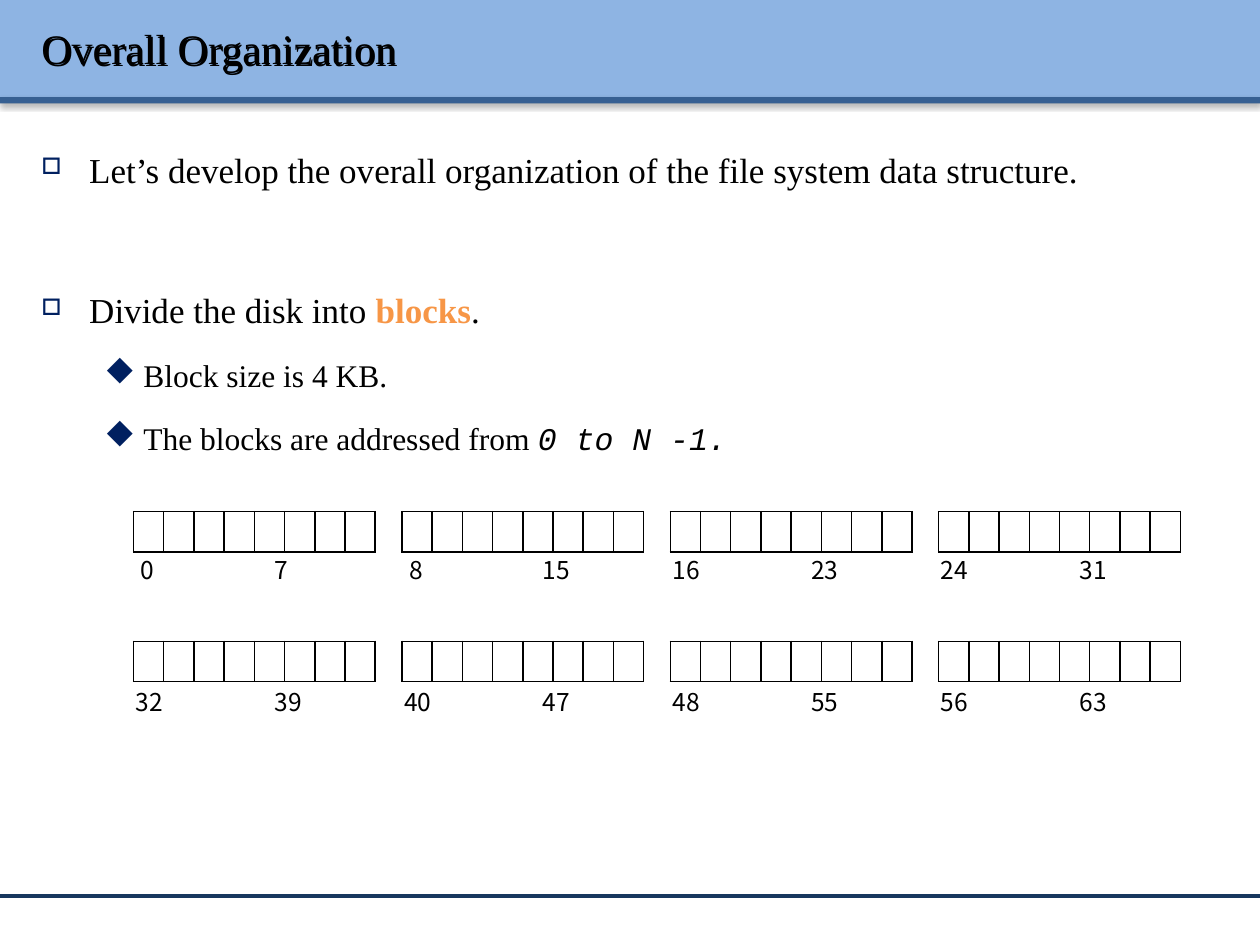
import lxml.etree
import pptx
import pptx.dml.color
import pptx.enum.shapes
import pptx.enum.text
import pptx.oxml.ns
import pptx.util

Inches = pptx.util.Inches
Pt = pptx.util.Pt
qn = pptx.oxml.ns.qn


def color(value):
    return pptx.dml.color.RGBColor.from_string(value)


def add_element(parent, tag, **attributes):
    return lxml.etree.SubElement(parent, qn(tag), attributes)


class SlideBuilder:
    """Holds the slide style and draws each kind of element."""

    serif = "Times New Roman"
    mono = "Courier New"
    label_font = "Noto Sans CJK KR"
    bullet_font = "Wingdings"
    black = "000000"
    accent = "F79646"
    bullet_color = "002060"

    def __init__(self, presentation):
        self.slide = presentation.slides.add_slide(presentation.slide_layouts[6])

    def add_shadow(self, shape, blur, distance, direction, opacity):
        shape.shadow.inherit = False
        effects = shape._element.spPr.find(qn("a:effectLst"))
        shadow = add_element(
            effects, "a:outerShdw", blurRad=str(Pt(blur)), dist=str(Pt(distance)),
            dir=str(direction * 60000), algn="ctr", rotWithShape="0")
        shade = add_element(shadow, "a:srgbClr", val=self.black)
        add_element(shade, "a:alpha", val=str(opacity * 1000))

    def bar(self, top, height, fill):
        shape = self.slide.shapes.add_shape(
            pptx.enum.shapes.MSO_SHAPE.RECTANGLE, 0, Inches(top), Inches(10), Inches(height))
        shape.fill.solid()
        shape.fill.fore_color.rgb = color(fill)
        shape.line.fill.background()
        self.add_shadow(shape, 3.1, 1.6, 90, 38)

    def rule(self, top, line_color, width):
        connector = self.slide.shapes.add_connector(
            pptx.enum.shapes.MSO_CONNECTOR.STRAIGHT, 0, Inches(top), Inches(10), Inches(top))
        connector.line.color.rgb = color(line_color)
        connector.line.width = Pt(width)
        add_element(connector._element.spPr, "a:effectLst")

    def text_box(self, left, top, width, height):
        shape = self.slide.shapes.add_textbox(
            Inches(left), Inches(top), Inches(width), Inches(height))
        shape.text_frame.word_wrap = True
        return shape

    def format_run(self, run, size, font_name, font_color=black):
        run.font.size = Pt(size)
        run.font.name = font_name
        run.font.color.rgb = color(font_color)

    def title(self, text):
        shape = self.text_box(0.23, 0.06, 9.61, 0.64)
        self.add_shadow(shape, 0, 1.2, 45, 100)
        shape.text_frame.vertical_anchor = pptx.enum.text.MSO_ANCHOR.MIDDLE
        shape.text_frame.text = text
        self.format_run(shape.text_frame.paragraphs[0].runs[0], 24, self.serif)

    def bullet(self, paragraph, parts, level, space_before):
        size, indent, hanging, symbol, scale = (
            (20, 0.38, 0.38, "o", 65), (18, 0.81, 0.31, "u", 100))[level]
        paragraph.level = level
        paragraph.line_spacing = 1.5
        paragraph.space_before = Pt(space_before)
        properties = paragraph._p.get_or_add_pPr()
        properties.set("marL", str(Inches(indent)))
        properties.set("indent", str(-Inches(hanging)))
        add_element(add_element(properties, "a:buClr"), "a:srgbClr", val=self.bullet_color)
        add_element(properties, "a:buSzPct", val=str(scale * 1000))
        add_element(properties, "a:buFont", typeface=self.bullet_font, charset="2")
        add_element(properties, "a:buChar", char=symbol)
        for text, style in parts:
            run = paragraph.add_run()
            run.text = text
            self.format_run(run, size, self.mono if style == "code" else self.serif,
                            self.accent if style == "key" else self.black)
            run.font.bold = style == "key"
            run.font.italic = style == "code"

    def body(self, items):
        text_frame = self.text_box(0.23, 0.96, 9.61, 6.02).text_frame
        for index, item in enumerate(items):
            paragraph = text_frame.add_paragraph() if index else text_frame.paragraphs[0]
            self.bullet(paragraph, *item)

    def block_row(self, left, top, count):
        cell_width, height = 0.24, 0.32
        frame = self.slide.shapes.add_table(
            1, count, Inches(left), Inches(top), Inches(cell_width * count), Inches(height))
        table = frame.table
        table.first_row = table.horz_banding = False
        for column in table.columns:
            column.width = Inches(cell_width)
        for cell in table.iter_cells():
            cell.margin_left = cell.margin_right = cell.margin_top = cell.margin_bottom = 0
            properties = cell._tc.get_or_add_tcPr()
            for side in ("a:lnL", "a:lnR", "a:lnT", "a:lnB"):
                line = add_element(properties, side, w=str(Pt(1)))
                add_element(add_element(line, "a:solidFill"), "a:srgbClr", val=self.black)
            cell.fill.solid()
            cell.fill.fore_color.rgb = color("FFFFFF")

    def block_label(self, left, top, first, last):
        inset = 0.04 if first < 10 else 0.08
        text_frame = self.text_box(left - inset, top, 2.03, 0.34).text_frame
        text_frame.text = f"{first}\t{last}"
        paragraph = text_frame.paragraphs[0]
        tabs = add_element(paragraph._p.get_or_add_pPr(), "a:tabLst")
        add_element(tabs, "a:tab", pos=str(Inches(1.02 + inset)), algn="l")
        for run in paragraph.runs:
            self.format_run(run, 14, self.label_font)


def main():
    presentation = pptx.Presentation()
    presentation.slide_width = Inches(10)
    presentation.slide_height = Inches(7.5)
    builder = SlideBuilder(presentation)

    builder.bar(0, 0.77, "8EB4E3")
    builder.bar(0.77, 0.05, "376092")
    builder.rule(7.11, "17375E", 2)
    builder.title("Overall Organization")
    builder.body([
        ([("Let’s develop the overall organization of the file system data structure.", "")],
         0, 5.5),
        ([("Divide the disk into ", ""), ("blocks", "key"), (".", "")], 0, 44.4),
        ([("Block size is 4 KB.", "")], 1, 3.6),
        ([("The blocks are addressed from ", ""), ("0 to N -1.", "code")], 1, 3.6),
    ])

    blocks_per_group, groups_per_row = 8, 4
    for row, (table_top, label_top) in enumerate([(4.06, 4.36), (5.09, 5.4)]):
        for column in range(groups_per_row):
            left = 1.06 + 2.13 * column
            first = (row * groups_per_row + column) * blocks_per_group
            builder.block_row(left, table_top, blocks_per_group)
            builder.block_label(left, label_top, first, first + blocks_per_group - 1)

    presentation.save("out.pptx")


if __name__ == "__main__":
    main()
